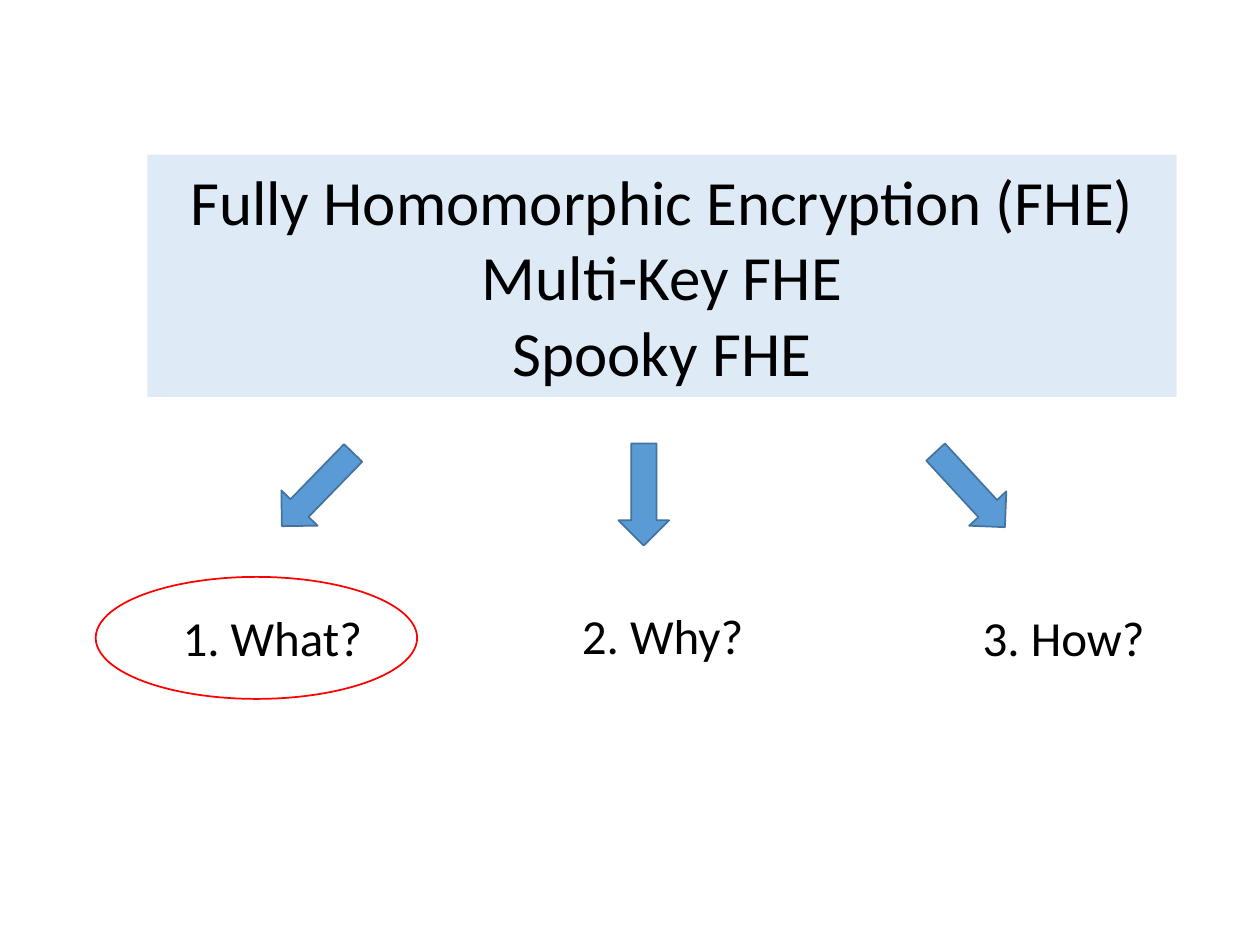
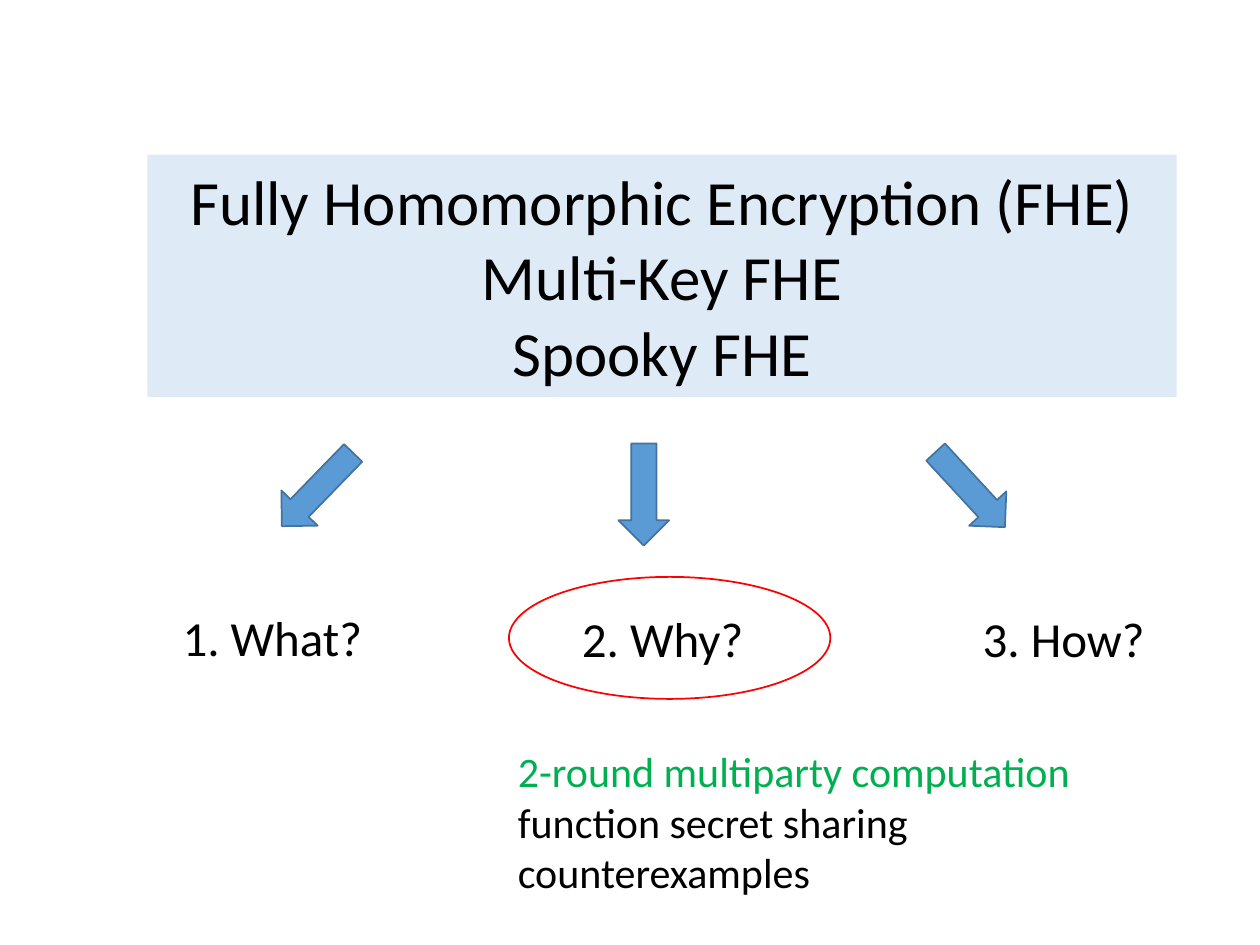
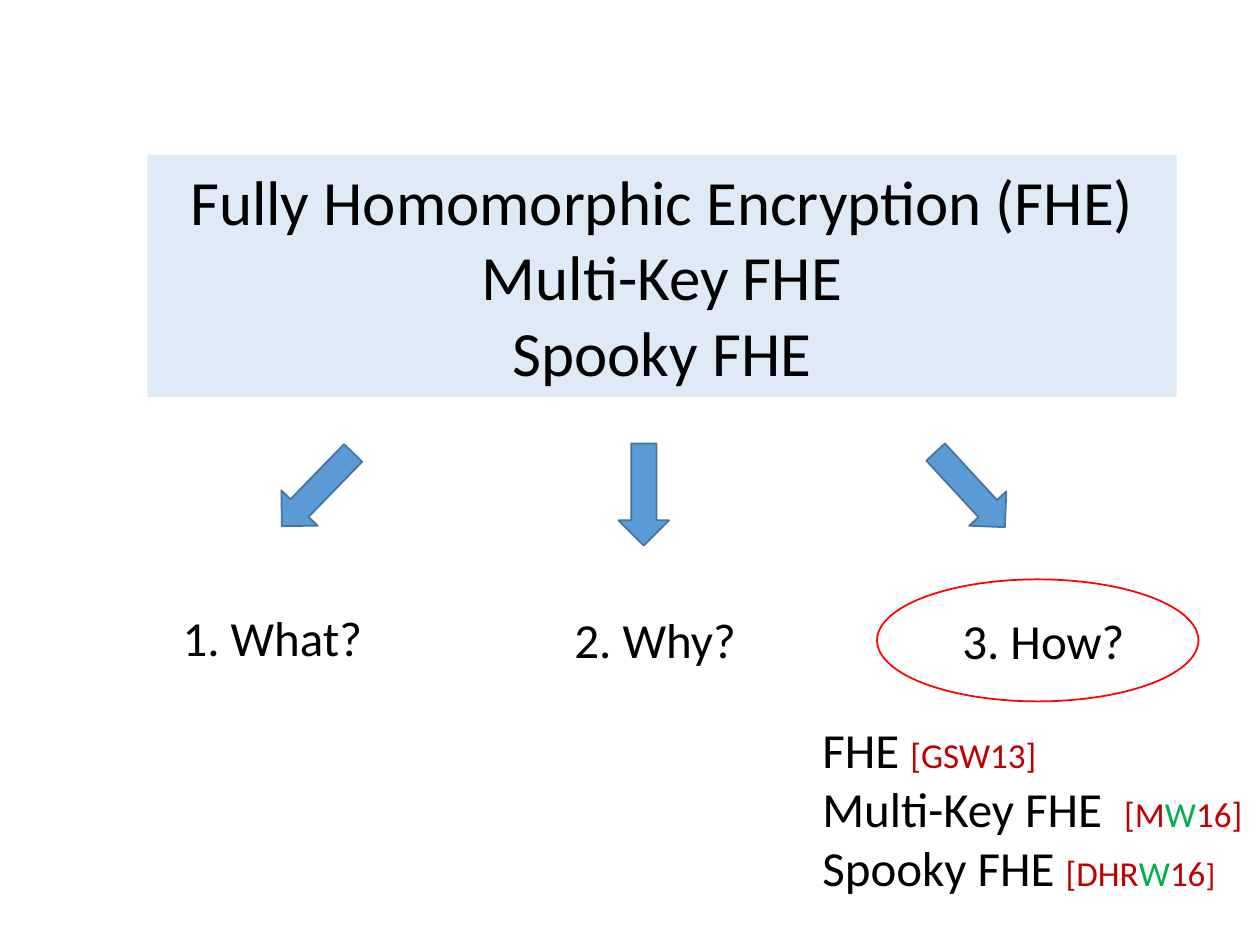
from dataclasses import dataclass

from pptx import Presentation
from pptx import util as u
from pptx.dml.color import RGBColor
from pptx.enum import shapes, text


@dataclass(frozen=True)
class Theme:
    font: str = "Calibri"
    ink: str = "000000"
    paper: str = "FFFFFF"
    panel: str = "DEEBF7"
    arrow: str = "5B9BD5"
    arrow_edge: str = "43739E"
    ring: str = "FF0000"
    green: str = "00B050"
    citation: str = "C00000"
    topic_size: int = 36
    question_size: int = 28
    reason_size: int = 24
    citation_size: int = 20
    bracket_size: int = 18
    line_width: int = 1


THEME = Theme()
TOPICS = ["Fully Homomorphic Encryption (FHE)", "Multi-Key FHE", "Spooky FHE"]
QUESTIONS = ["1. What?", "2. Why?", "3. How?"]
QUESTION_WIDTHS = [4.32, 4.04, 3.99]
REASONS = [
    ("2-round multiparty computation", THEME.green),
    ("function secret sharing", THEME.ink),
    ("counterexamples", THEME.ink),
]
SCHEMES = [
    ("FHE ", [("[GSW13]", THEME.citation, THEME.citation_size)]),
    ("Multi-Key FHE  ", [
        ("[M", THEME.citation, THEME.citation_size),
        ("W", THEME.green, THEME.citation_size),
        ("16]", THEME.citation, THEME.citation_size),
    ]),
    ("Spooky FHE ", [
        ("[DHR", THEME.citation, THEME.citation_size),
        ("W", THEME.green, THEME.citation_size),
        ("16", THEME.citation, THEME.citation_size),
        ("]", THEME.citation, THEME.bracket_size),
    ]),
]


def cm_box(left, top, width, height):
    return [u.Cm(length) for length in (left, top, width, height)]


def style_font(font, size, color=THEME.ink):
    font.name = THEME.font
    font.size = u.Pt(size)
    font.color.rgb = RGBColor.from_string(color)


def add_figure(slide, kind, box, fill, edge=None):
    figure = slide.shapes.add_shape(kind, *cm_box(*box))
    figure.shadow.inherit = False
    figure.fill.solid()
    figure.fill.fore_color.rgb = RGBColor.from_string(fill)
    if edge:
        figure.line.color.rgb = RGBColor.from_string(edge)
        figure.line.width = u.Pt(THEME.line_width)
    else:
        figure.line.fill.background()
    return figure


def write_lines(frame, lines, size, align=text.PP_ALIGN.LEFT):
    for index, (words, color) in enumerate(lines):
        paragraph = frame.paragraphs[0] if index == 0 else frame.add_paragraph()
        paragraph.text = words
        paragraph.alignment = align
        style_font(paragraph.font, size, color)


def add_text(slide, box, wrap=True):
    frame = slide.shapes.add_textbox(*cm_box(*box)).text_frame
    frame.word_wrap = wrap
    frame.auto_size = text.MSO_AUTO_SIZE.SHAPE_TO_FIT_TEXT
    return frame


def add_topic_panel(slide):
    panel = add_figure(slide, shapes.MSO_SHAPE.RECTANGLE,
                       (2.97, 3.12, 20.75, 4.88), THEME.panel)
    panel.text_frame.word_wrap = True
    write_lines(panel.text_frame, [(topic, THEME.ink) for topic in TOPICS],
                THEME.topic_size, text.PP_ALIGN.CENTER)


def add_arrows(slide):
    for index, (top, angle) in enumerate([(8.84, 44.2), (8.94, 0), (8.84, 317.3)]):
        arrow = add_figure(slide, shapes.MSO_SHAPE.DOWN_ARROW,
                           (5.89 + 6.58 * index, top, 1.02, 2.06),
                           THEME.arrow, THEME.arrow_edge)
        arrow.rotation = angle


def add_questions(slide, corners):
    for question, (left, top), width in zip(QUESTIONS, corners, QUESTION_WIDTHS):
        frame = add_text(slide, (left, top, width, 1.45))
        write_lines(frame, [(question, THEME.ink)], THEME.question_size)


def add_agenda(presentation, ring_corner, question_corners):
    slide = presentation.slides.add_slide(presentation.slide_layouts[6])
    add_figure(slide, shapes.MSO_SHAPE.OVAL, (*ring_corner, 6.48, 2.46),
               THEME.paper, THEME.ring)
    add_topic_panel(slide)
    add_arrows(slide)
    add_questions(slide, question_corners)
    return slide


def add_reasons(slide):
    frame = add_text(slide, (10.19, 14.91, 11.76, 3.33), wrap=False)
    write_lines(frame, REASONS, THEME.reason_size)


def add_schemes(slide):
    frame = add_text(slide, (16.33, 14.38, 9.07, 3.84), wrap=False)
    for index, (scheme, citation) in enumerate(SCHEMES):
        paragraph = frame.paragraphs[0] if index == 0 else frame.add_paragraph()
        for words, color, size in [(scheme, THEME.ink, THEME.question_size), *citation]:
            run = paragraph.add_run()
            run.text = words
            style_font(run.font, size, color)


def main():
    presentation = Presentation()
    presentation.slide_width = u.Cm(25.4)
    presentation.slide_height = u.Cm(19.05)

    add_agenda(presentation, (1.93, 11.63),
               [(3.43, 12.12), (11.48, 12.09), (19.56, 12.12)])
    why = add_agenda(presentation, (10.26, 11.63),
                     [(3.43, 12.12), (11.48, 12.14), (19.56, 12.14)])
    add_reasons(why)
    how = add_agenda(presentation, (17.68, 11.68),
                     [(3.43, 12.12), (11.33, 12.17), (19.15, 12.19)])
    add_schemes(how)

    presentation.save("out.pptx")


if __name__ == "__main__":
    main()
